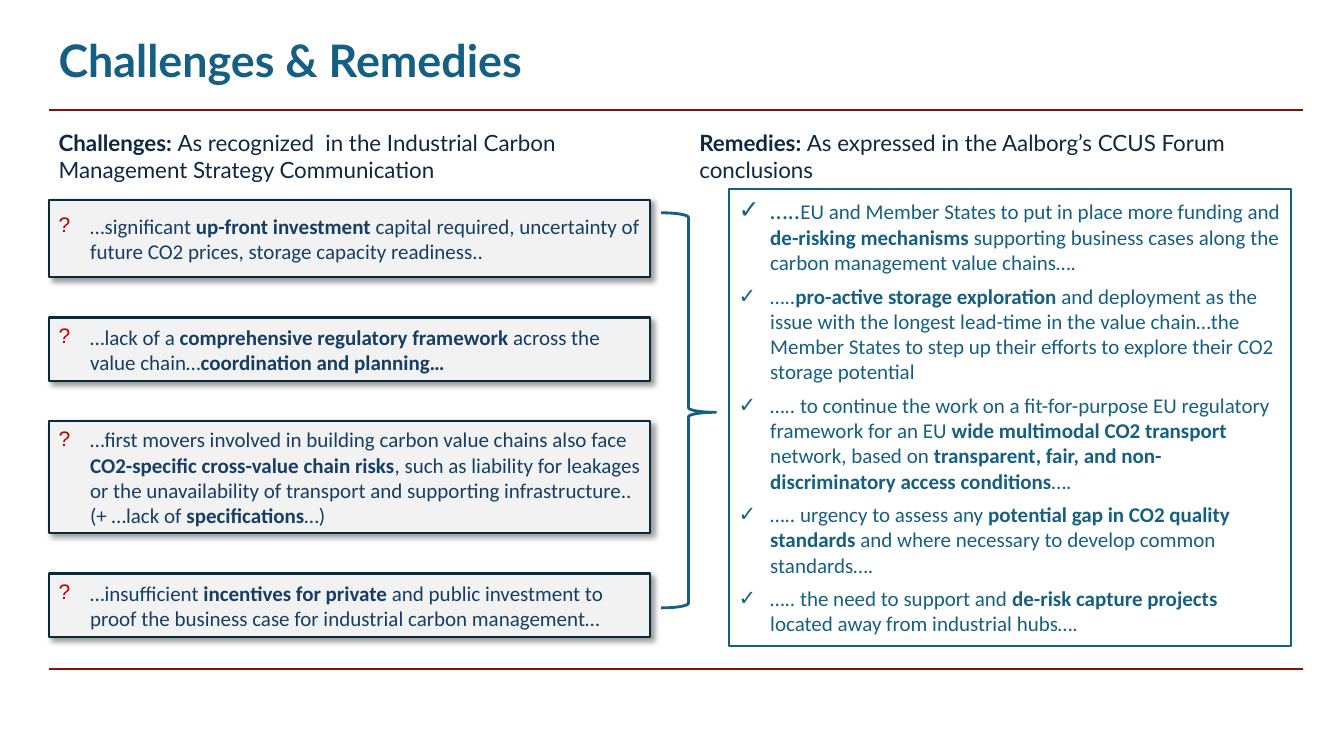
from dataclasses import dataclass

import lxml.etree
import pptx
import pptx.dml.color
import pptx.enum.shapes
import pptx.enum.text
import pptx.oxml.ns
import pptx.util

Pt = pptx.util.Pt
qn = pptx.oxml.ns.qn
SHAPE = pptx.enum.shapes.MSO_SHAPE
ANCHOR = pptx.enum.text.MSO_ANCHOR
FIT = pptx.enum.text.MSO_AUTO_SIZE


@dataclass(frozen=True)
class Theme:
    heading_font: str = "Lato"
    body_font: str = "Calibri"
    bullet_font: str = "Arial"
    teal: str = "156082"
    navy: str = "0E2841"
    card_text: str = "163E64"
    card_line: str = "092A39"
    card_fill: str = "F2F2F2"
    rule: str = "8A1108"
    question: str = "C00000"
    shadow: str = "000000"
    title: int = 32
    heading: int = 16
    body: int = 15
    lead: int = 18


T = Theme()

CHALLENGES = [
    (55.4, "…significant **up-front investment **capital required, uncertainty of "
           "future CO2 prices, storage capacity readiness.."),
    (45.4, "…lack of a **comprehensive regulatory framework **across the value chain…"
           "**coordination and planning…**"),
    (79.9, "…first movers involved in building carbon value chains also face "
           "**CO2-specific cross-value chain risks**, such as liability for leakages or the "
           "unavailability of transport and supporting infrastructure..(+ …lack of "
           "**specifications**…)"),
    (45.4, "…insufficient **incentives for private** and public investment to proof the "
           "business case for industrial carbon management…"),
]

REMEDY_LEAD = "….."
REMEDIES = [
    "EU and Member States to put in place more funding and **de-risking mechanisms **"
    "supporting business cases along the carbon management value chains….",
    "…..**pro-active storage exploration **and deployment as the issue with the longest "
    "lead-time in the value chain…the Member States to step up their efforts to explore "
    "their CO2 storage potential",
    "….. to continue the work on a fit-for-purpose EU regulatory framework for an EU "
    "**wide multimodal CO2 transport **network, based on **transparent, fair, and "
    "non-discriminatory access conditions**….",
    "….. urgency to assess any **potential gap in CO2 quality standards **and where "
    "necessary to develop common standards….",
    "….. the need to support and **de-risk capture projects **located away from "
    "industrial hubs….",
]


def rgb(color):
    return pptx.dml.color.RGBColor.from_string(color)


def add_run(p, text, font, size, color, bold=False):
    r = p.add_run()
    r.text = text
    r.font.name = font
    r.font.size = Pt(size)
    r.font.bold = bold
    r.font.color.rgb = rgb(color)


def add_marked_runs(p, marked, font, size, color):
    for i, text in enumerate(marked.split("**")):
        if text:
            add_run(p, text, font, size, color, bold=i % 2 == 1)


def add_bullet(p, char, color):
    pPr = p._p.get_or_add_pPr()
    pPr.set("marL", str(Pt(22.5)))
    pPr.set("indent", str(-Pt(22.5)))
    buClr = lxml.etree.SubElement(pPr, qn("a:buClr"))
    lxml.etree.SubElement(buClr, qn("a:srgbClr"), val=color)
    lxml.etree.SubElement(pPr, qn("a:buFont"), typeface=T.bullet_font)
    lxml.etree.SubElement(pPr, qn("a:buChar"), char=char)
    p.alignment = pptx.enum.text.PP_ALIGN.LEFT


def add_text(s, x, y, w, h, marked, size, color, anchor=ANCHOR.TOP, spacing=None):
    tf = s.shapes.add_textbox(Pt(x), Pt(y), Pt(w), Pt(h)).text_frame
    tf.word_wrap = True
    tf.vertical_anchor = anchor
    p = tf.paragraphs[0]
    p.line_spacing = spacing
    add_marked_runs(p, marked, T.heading_font, size, color)


def add_rule(s, y):
    line = s.shapes.add_connector(pptx.enum.shapes.MSO_CONNECTOR.STRAIGHT,
                                  Pt(35.3), Pt(y), Pt(931), Pt(y))
    line.line.color.rgb = rgb(T.rule)
    line.line.width = Pt(1.5)
    lxml.etree.SubElement(line._element.spPr, qn("a:effectLst"))


def add_outline(s, kind, x, y, w, h, color, width, fill=None):
    sp = s.shapes.add_shape(kind, Pt(x), Pt(y), Pt(w), Pt(h))
    sp.shadow.inherit = False
    if fill:
        sp.fill.solid()
        sp.fill.fore_color.rgb = rgb(fill)
    else:
        sp.fill.background()
    sp.line.color.rgb = rgb(color)
    sp.line.width = Pt(width)
    sp.text_frame.word_wrap = True
    return sp


def add_shadow(sp):
    effects = sp._element.spPr.find(qn("a:effectLst"))
    shadow = lxml.etree.SubElement(effects, qn("a:outerShdw"), blurRad=str(Pt(4)),
                                   dist=str(Pt(3)), dir=str(45 * 60000),
                                   algn="tl", rotWithShape="0")
    clr = lxml.etree.SubElement(shadow, qn("a:srgbClr"), val=T.shadow)
    lxml.etree.SubElement(clr, qn("a:alpha"), val="40000")


def add_challenge(s, y, h, marked):
    sp = add_outline(s, SHAPE.RECTANGLE, 34.8, y, 429.8, h, T.card_line, 1.5, T.card_fill)
    add_shadow(sp)
    sp.text_frame.vertical_anchor = ANCHOR.MIDDLE
    p = sp.text_frame.paragraphs[0]
    add_bullet(p, "?", T.question)
    add_marked_runs(p, marked, T.body_font, T.body, T.card_text)


def add_remedies(s):
    sp = add_outline(s, SHAPE.RECTANGLE, 520.6, 135.2, 401.6, 326.2, T.teal, 1.5)
    tf = sp.text_frame
    tf.vertical_anchor = ANCHOR.TOP
    tf.auto_size = FIT.SHAPE_TO_FIT_TEXT
    for i, marked in enumerate(REMEDIES):
        p = tf.add_paragraph() if i else tf.paragraphs[0]
        add_bullet(p, "✓", T.teal)
        if i:
            p.space_before = Pt(6)
        else:
            add_run(p, REMEDY_LEAD, T.body_font, T.lead, T.teal)
        add_marked_runs(p, marked, T.body_font, T.body, T.teal)


def main():
    prs = pptx.Presentation()
    prs.slide_width, prs.slide_height = Pt(960), Pt(540)
    s = prs.slides.add_slide(prs.slide_layouts[6])

    for y in (78.8, 478.1):
        add_rule(s, y)
    add_text(s, 34.8, 20.2, 859, 45.4, "**Challenges & Remedies**", T.title, T.teal,
             ANCHOR.BOTTOM, 0.9)
    add_text(s, 34.8, 88.6, 457.9, 46.1,
             "**Challenges: **As recognized  in the Industrial Carbon Management "
             "Strategy Communication", T.heading, T.navy)
    add_text(s, 492.5, 88.6, 457.9, 46.1,
             "**Remedies: **As expressed in the Aalborg’s CCUS Forum conclusions",
             T.heading, T.navy)

    y, gap = 142.6, 28.8
    for h, marked in CHALLENGES:
        add_challenge(s, y, h, marked)
        y += h + gap

    brace = add_outline(s, SHAPE.RIGHT_BRACE, 472.3, 152, 38.9, 282.2, T.teal, 2)
    brace.adjustments[0] = 0.083
    brace.adjustments[1] = 0.505
    add_remedies(s)

    prs.save("out.pptx")


if __name__ == "__main__":
    main()
